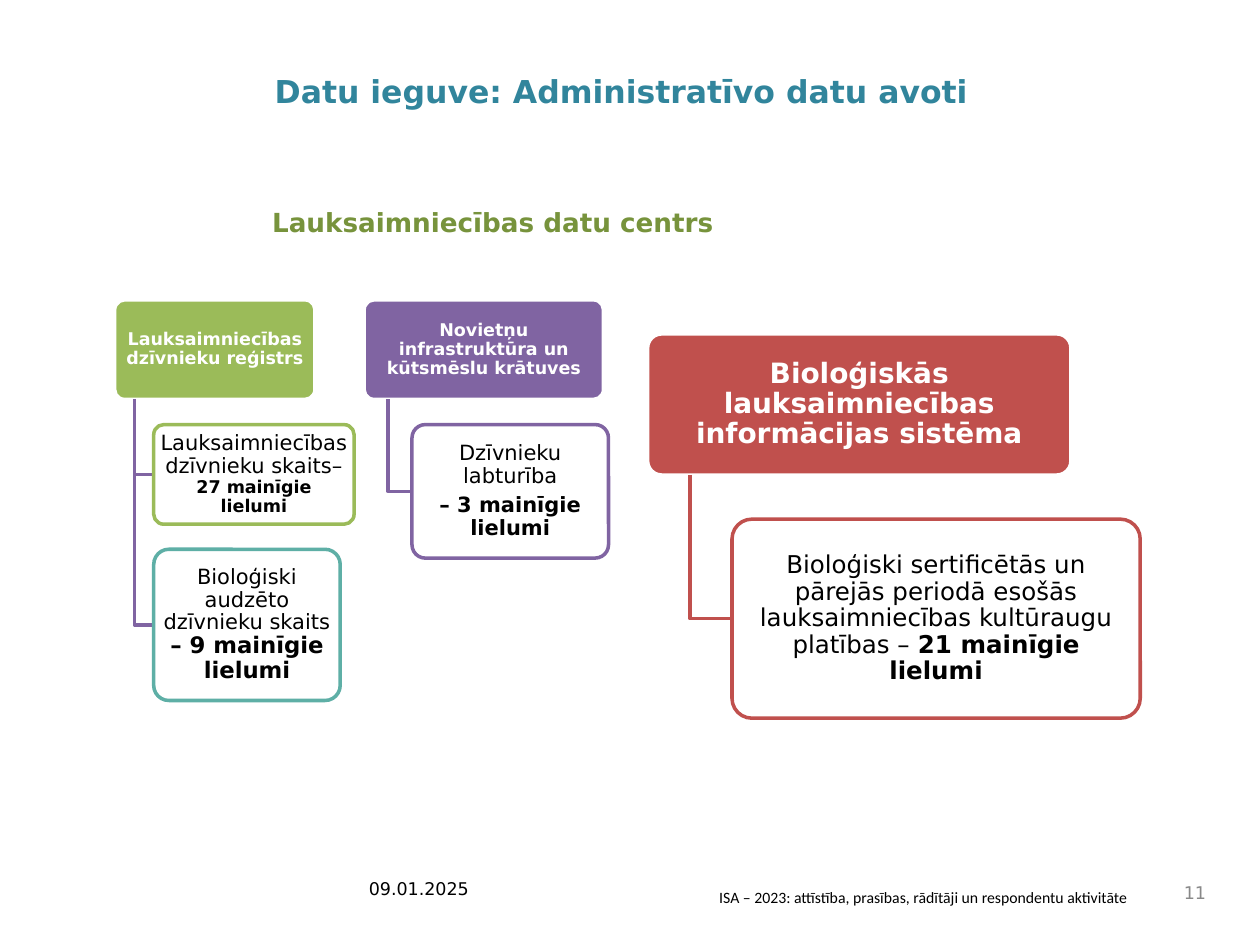
import pptx
import pptx.dml.color
import pptx.enum.shapes
import pptx.enum.text
import pptx.oxml.ns
import pptx.util
from lxml import etree

Inches = pptx.util.Inches
Pt = pptx.util.Pt
RGBColor = pptx.dml.color.RGBColor
Align = pptx.enum.text.PP_ALIGN
Anchor = pptx.enum.text.MSO_ANCHOR

WHITE = RGBColor(0xFF, 0xFF, 0xFF)
BLACK = RGBColor(0, 0, 0)
GREY = RGBColor(0x89, 0x89, 0x89)
BLUE = RGBColor(0x31, 0x85, 0x9C)
DARK_GREEN = RGBColor(0x77, 0x93, 0x3C)
GREEN = RGBColor(0x9B, 0xBB, 0x59)
PURPLE = RGBColor(0x80, 0x64, 0xA2)
TEAL = RGBColor(0x5E, 0xAF, 0xA6)
RED = RGBColor(0xC0, 0x50, 0x4D)


class SlideBuilder:
    font = "DejaVu Sans"
    line_width = Pt(2)
    corner = 0.1

    def __init__(self, slide):
        self.slide = slide

    def set_text(self, frame, paragraphs, color, inset, align, anchor):
        """Fill a frame; each paragraph is a list of (text, size, bold) runs."""
        frame.word_wrap = True
        frame.auto_size = pptx.enum.text.MSO_AUTO_SIZE.NONE
        frame.vertical_anchor = anchor
        frame.margin_left = frame.margin_right = Inches(inset[0])
        frame.margin_top = frame.margin_bottom = Inches(inset[1])
        for index, runs in enumerate(paragraphs):
            paragraph = frame.add_paragraph() if index else frame.paragraphs[0]
            paragraph.alignment = align
            for text, size, bold in runs:
                run = paragraph.add_run()
                run.text = text
                run.font.name = self.font
                run.font.size = Pt(size)
                run.font.bold = bold
                run.font.color.rgb = color

    def title(self, box, text, size, color):
        holder = self.slide.shapes.title
        holder.left, holder.top, holder.width, holder.height = map(Inches, box)
        self.set_text(holder.text_frame, [[(text, size, True)]], color,
                      (0.1, 0.05), Align.LEFT, Anchor.TOP)

    def label(self, box, text, size, color, bold=False, inset=(0.1, 0.05),
              align=Align.LEFT, anchor=Anchor.TOP):
        frame = self.slide.shapes.add_textbox(*map(Inches, box)).text_frame
        self.set_text(frame, [[(text, size, bold)]], color, inset, align, anchor)

    def card(self, box, paragraphs, fill, line, color, inset, opacity=100):
        card = self.slide.shapes.add_shape(
            pptx.enum.shapes.MSO_SHAPE.ROUNDED_RECTANGLE, *map(Inches, box))
        card.adjustments[0] = self.corner
        card.shadow.inherit = False
        card.fill.solid()
        card.fill.fore_color.rgb = fill
        if opacity < 100:
            qn = pptx.oxml.ns.qn
            solid = card.element.spPr.find(qn("a:solidFill"))
            etree.SubElement(solid[0], qn("a:alpha"), val=str(opacity * 1000))
        card.line.color.rgb = line
        card.line.width = self.line_width
        self.set_text(card.text_frame, paragraphs, color, inset,
                      Align.CENTER, Anchor.MIDDLE)
        for paragraph in card.text_frame.paragraphs:
            paragraph.line_spacing = 0.9
            paragraph.space_after = Pt(4)

    def branch(self, parent, child, color):
        """Run down from a tenth of the parent's width, then to the child's side."""
        x, y = parent[0] + parent[2] / 10, parent[1] + parent[3]
        end_x, end_y = child[0], child[1] + child[3] / 2
        builder = self.slide.shapes.build_freeform(Inches(x), Inches(y))
        builder.add_line_segments(
            [(Inches(x), Inches(end_y)), (Inches(end_x), Inches(end_y))], close=False)
        elbow = builder.convert_to_shape()
        elbow.shadow.inherit = False
        elbow.fill.background()
        elbow.line.color.rgb = color
        elbow.line.width = self.line_width

    def tree(self, parent, heading, size, fill, branch_color, children, inset):
        self.card(parent, [[(heading, size, True)]], fill, WHITE, WHITE, inset)
        for child, line, paragraphs in children:
            self.branch(parent, child, branch_color)
            self.card(child, paragraphs, WHITE, line, BLACK, (0.03, 0.02), 90)


def main():
    deck = pptx.Presentation()
    deck.slide_width, deck.slide_height = Inches(10), Inches(7.5)
    page = SlideBuilder(deck.slides.add_slide(deck.slide_layouts[5]))

    page.title((2.08, 0.52, 6.9, 0.4), "Datu ieguve: Administratīvo datu avoti", 18, BLUE)
    page.label((2.08, 1.6, 6.9, 0.34), "Lauksaimniecības datu centrs", 15,
               DARK_GREEN, True, (0.08, 0.04))

    page.tree((0.91, 2.38, 1.59, 0.79), "Lauksaimniecības dzīvnieku reģistrs", 10,
              GREEN, PURPLE, [
        ((1.22, 3.37, 1.59, 0.79), GREEN,
         [[("Lauksaimniecības dzīvnieku skaits– ", 12, False),
           ("27 mainīgie lielumi", 10, True)]]),
        ((1.22, 4.36, 1.48, 1.2), TEAL,
         [[("Bioloģiski audzēto dzīvnieku skaits ", 12, False),
           ("– 9 mainīgie lielumi", 13, True)]]),
    ], (0.02, 0.01))
    page.tree((2.89, 2.38, 1.9, 0.79), "Novietņu infrastruktūra un kūtsmēslu krātuves", 10,
              PURPLE, PURPLE, [
        ((3.27, 3.37, 1.56, 1.06), PURPLE,
         [[("Dzīvnieku labturība", 12, False)],
          [("– 3 mainīgie lielumi", 12, True)]]),
    ], (0.02, 0.01))
    page.tree((5.14, 2.65, 3.36, 1.12), "Bioloģiskās lauksaimniecības informācijas sistēma", 16,
              RED, RED, [
        ((5.81, 4.12, 3.24, 1.58), RED,
         [[("Bioloģiski sertificētās un pārejās periodā esošās "
            "lauksaimniecības kultūraugu platības – ", 14, False),
           ("21 mainīgie lielumi", 14, True)]]),
    ], (0.03, 0.02))

    page.label((2.83, 6.92, 2.17, 0.33), "09.01.2025", 10, BLACK)
    page.label((9.21, 6.92, 0.46, 0.33), "11", 10, GREY,
               align=Align.RIGHT, anchor=Anchor.MIDDLE)
    page.font = "Calibri"
    page.label((5.61, 7, 3.73, 0.25),
               "ISA – 2023: attīstība, prasības, rādītāji un respondentu aktivitāte", 9, BLACK)

    deck.save("out.pptx")


if __name__ == "__main__":
    main()
